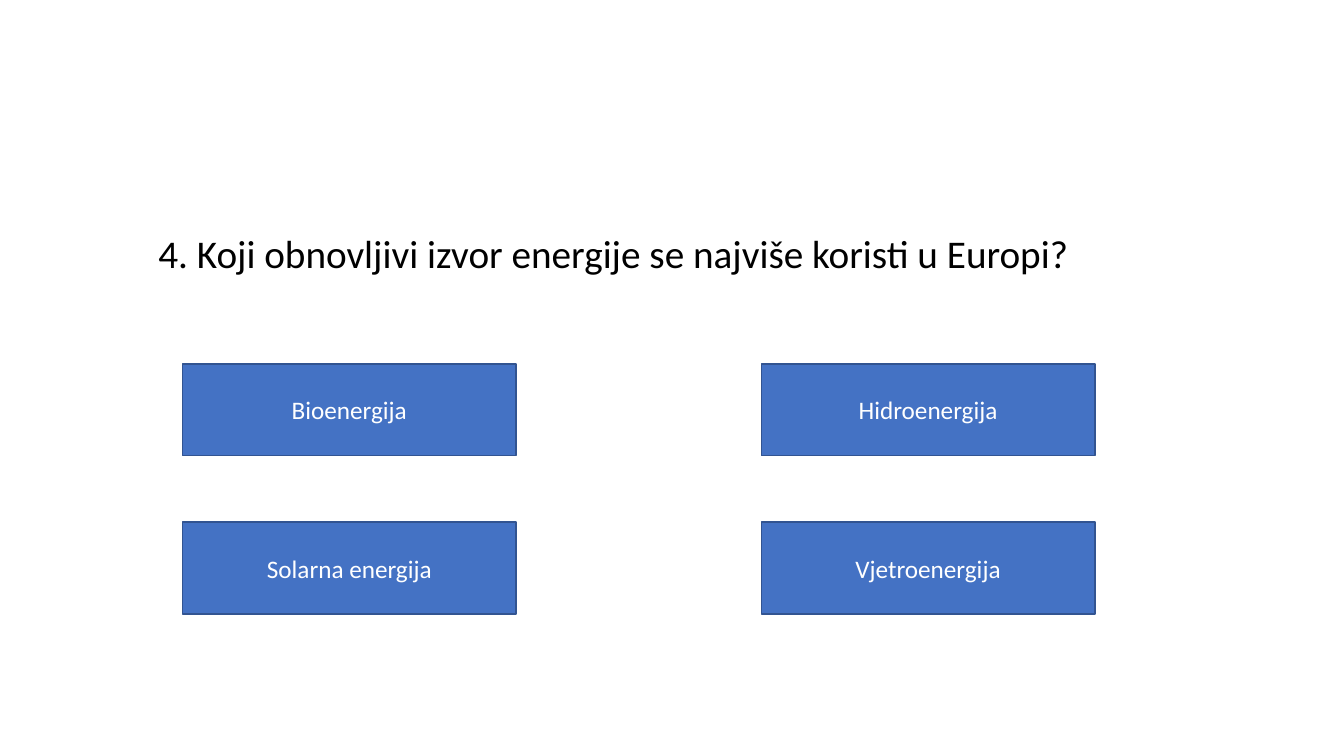
from pptx import Presentation
from pptx.dml.color import RGBColor
from pptx.enum.shapes import MSO_SHAPE
from pptx.enum.text import MSO_ANCHOR, MSO_AUTO_SIZE, PP_ALIGN
from pptx.util import Pt

PX = 9144
QUESTION = "4. Koji obnovljivi izvor energije se najviše koristi u Europi?"
ANSWERS = [
    ["Bioenergija", "Hidroenergija"],
    ["Solarna energija", "Vjetroenergija"],
]


def px(n):
    """Turn a length in px into EMU."""
    return n * PX


def rgb(value):
    """Turn a hex string into a colour."""
    return RGBColor.from_string(value)


def write(sp, text, size=18, color="000000", align=PP_ALIGN.LEFT,
          anchor=MSO_ANCHOR.TOP):
    """Put formatted text into a shape."""
    tf = sp.text_frame
    tf.word_wrap = True
    tf.auto_size = MSO_AUTO_SIZE.NONE
    tf.vertical_anchor = anchor
    p = tf.paragraphs[0]
    p.alignment = align
    r = p.add_run()
    r.text = text
    r.font.name = "Calibri"
    r.font.size = Pt(size)
    r.font.color.rgb = rgb(color)


def add_question(s, x, y, w, h):
    """Place the question in the title placeholder."""
    sp = s.shapes.title
    sp.left, sp.top, sp.width, sp.height = px(x), px(y), px(w), px(h)
    write(sp, QUESTION, size=28)


def add_answer(s, text, x, y, w, h):
    """Draw one answer button."""
    sp = s.shapes.add_shape(MSO_SHAPE.RECTANGLE, px(x), px(y), px(w), px(h))
    sp.shadow.inherit = False
    sp.fill.solid()
    sp.fill.fore_color.rgb = rgb("4472C4")
    sp.line.color.rgb = rgb("325491")
    sp.line.width = Pt(1)
    write(sp, text, color="FFFFFF", align=PP_ALIGN.CENTER,
          anchor=MSO_ANCHOR.MIDDLE)


def add_answers(s, x, y, w, h, button_w=331, button_h=91):
    """Spread the answer buttons over the corners of a box."""
    step_x, step_y = w - button_w, h - button_h
    for row, texts in enumerate(ANSWERS):
        for col, text in enumerate(texts):
            add_answer(s, text, x + col * step_x, y + row * step_y,
                       button_w, button_h)


def main():
    """Build the quiz slide and save it."""
    prs = Presentation()
    prs.slide_width, prs.slide_height = px(1333), px(750)
    s = prs.slides.add_slide(prs.slide_layouts[5])
    add_question(s, 147, 222, 1180, 57)
    add_answers(s, 181, 361, 905, 248)
    prs.save("out.pptx")


if __name__ == "__main__":
    main()
